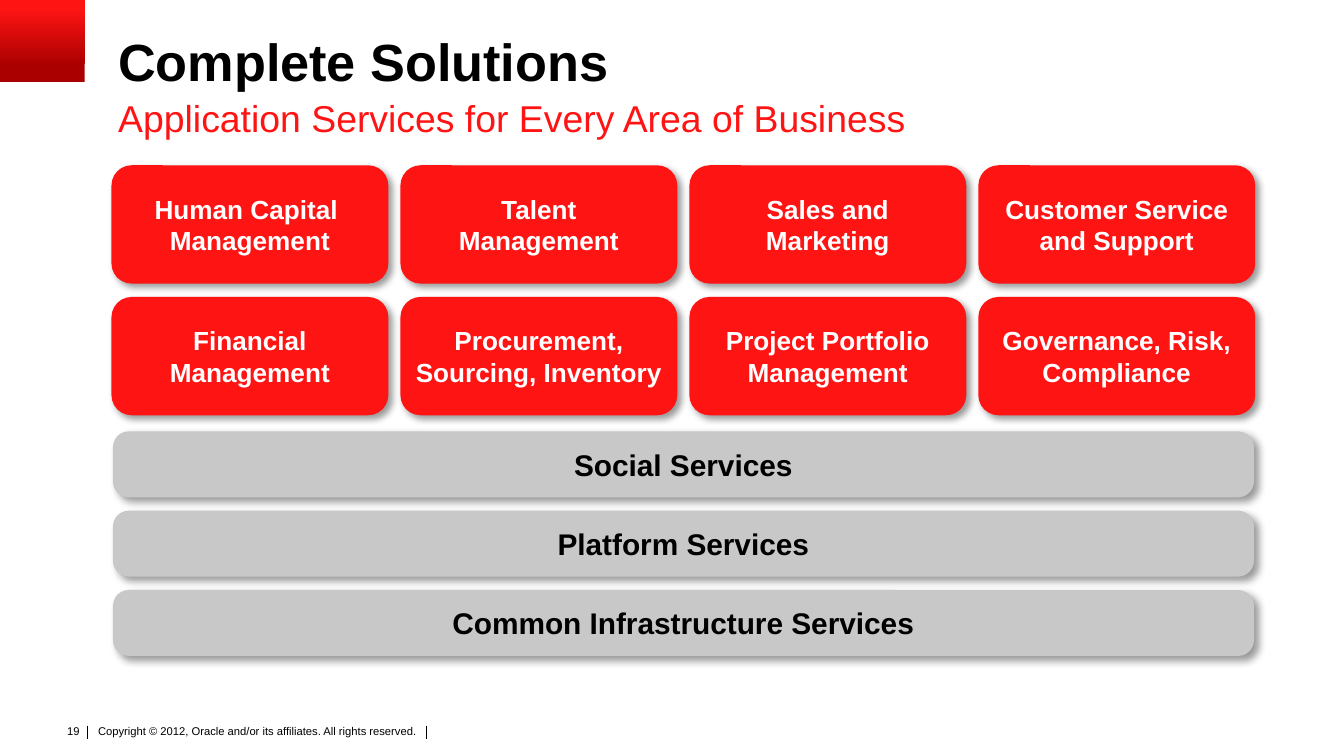
from lxml import etree
from pptx import Presentation
from pptx import util as u
from pptx.dml.color import RGBColor
from pptx.enum import shapes, text
from pptx.oxml import ns, parse_xml

HUES = {"red": "FF1414", "dark": "AA0000", "gray": "C8C8C8", "black": "000000", "white": "FFFFFF"}
SHADE = (
    '<a:effectLst %s><a:outerShdw blurRad="50800" dist="38100" dir="2700000" algn="tl" rotWithShape="0">'
    '<a:srgbClr val="000000"><a:alpha val="40000"/></a:srgbClr></a:outerShdw></a:effectLst>'
) % ns.nsdecls("a")


def hue(name):
    return RGBColor.from_string(HUES[name])


def write(frame, words, size, color="black", bold=False, align="LEFT", anchor="TOP",
          pads=(0, 0, 0, 0), wrap=True, lead=None):
    frame.word_wrap = wrap
    frame.vertical_anchor = getattr(text.MSO_ANCHOR, anchor)
    frame.margin_left, frame.margin_top, frame.margin_right, frame.margin_bottom = map(u.Inches, pads)
    frame.text = words
    for para in frame.paragraphs:
        para.alignment = getattr(text.PP_ALIGN, align)
        if lead:
            para.line_spacing = lead
        for run in para.runs:
            font = run.font
            font.name, font.size, font.bold = "Arial", u.Pt(size), bold
            font.color.rgb = hue(color)


class Deck:
    """Holds the slide and draws each kind of element on it."""

    def __init__(self, slide):
        self.slide = slide

    def label(self, box, words, size, **style):
        area = self.slide.shapes.add_textbox(*map(u.Inches, box))
        write(area.text_frame, words, size, **style)

    def card(self, box, words, size, fill, round=0.17, **style):
        card = self.slide.shapes.add_shape(shapes.MSO_SHAPE.ROUNDED_RECTANGLE, *map(u.Inches, box))
        card.adjustments[0] = round
        card.fill.solid()
        card.fill.fore_color.rgb = hue(fill)
        card.line.fill.background()
        card._element.spPr.append(parse_xml(SHADE))
        write(card.text_frame, words, size, bold=True, align="CENTER", anchor="MIDDLE", **style)

    def rule(self, x, top, end):
        rule = self.slide.shapes.add_connector(
            shapes.MSO_CONNECTOR.STRAIGHT, *map(u.Inches, (x, top, x, end)))
        rule.line.color.rgb = hue("black")
        rule.line.width = u.Pt(0.5)
        etree.SubElement(rule._element.spPr, ns.qn("a:effectLst"))

    def block(self, box):
        block = self.slide.shapes.add_shape(shapes.MSO_SHAPE.RECTANGLE, *map(u.Inches, box))
        block.shadow.inherit = False
        block.line.fill.background()
        block.fill.gradient()
        block.fill.gradient_angle = 90
        for stop, place, name in zip(block.fill.gradient_stops, (0.2, 0.9), ("dark", "red")):
            stop.position = place
            stop.color.rgb = hue(name)


def main():
    show = Presentation()
    show.slide_width = u.Inches(10)
    show.slide_height = show.slide_width * 9 // 16
    deck = Deck(show.slides.add_slide(show.slide_layouts[6]))

    deck.label((0.69, 5.37, 2.74, 0.24),
               "Copyright © 2012, Oracle and/or its affiliates. All rights reserved.",
               6, pads=(0.04, 0.02, 0.04, 0.02))
    for x in (0.65, 3.17):
        deck.rule(x, 5.4, 5.5)
    deck.label((0.39, 5.34, 0.3, 0.2), "19", 6, align="RIGHT", pads=(0, 0.05, 0.1, 0.05))
    deck.block((0, 0, 0.63, 0.61))
    deck.label((0.88, 0.27, 9, 0.44), "Complete Solutions", 28, bold=True, lead=0.9)
    deck.label((0.88, 0.71, 9, 0.33), "Application Services for Every Area of Business", 20, color="red")

    areas = (
        ("Human Capital \nManagement", "Talent\vManagement",
         "Sales and\vMarketing", "Customer Service\vand Support"),
        ("Financial Management", "Procurement, Sourcing, Inventory",
         "Project Portfolio\vManagement", "Governance, Risk, Compliance"),
    )
    for row, names in enumerate(areas):
        for col, name in enumerate(names):
            deck.card((0.83 + 2.15 * col, 1.23 + 0.98 * row, 2.06, 0.88), name, 14, "red",
                      color="white", pads=(0, 0.05, 0, 0.05))

    for row, name in enumerate(("Social", "Platform", "Common Infrastructure")):
        deck.card((0.84, 3.21 + 0.59 * row, 8.49, 0.49), f"{name} Services", 16, "gray",
                  round=0.24, wrap=False)

    show.save("out.pptx")


if __name__ == "__main__":
    main()
